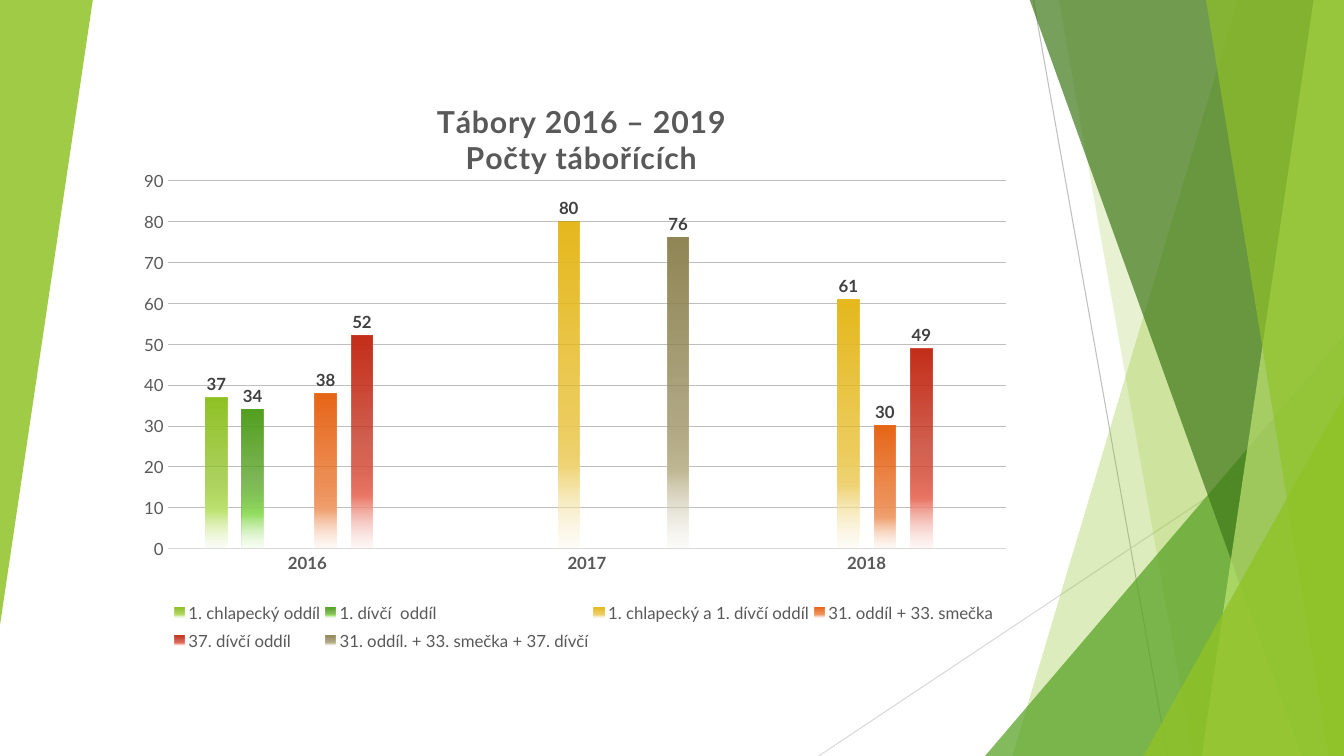
from lxml import etree
from pptx import Presentation
from pptx.chart.data import CategoryChartData
from pptx.dml.color import RGBColor
from pptx.enum.chart import XL_CHART_TYPE as ChartType
from pptx.enum.chart import XL_LABEL_POSITION as LabelPosition
from pptx.enum.chart import XL_LEGEND_POSITION as LegendPosition
from pptx.enum.chart import XL_TICK_MARK as TickMark
from pptx.enum.shapes import MSO_CONNECTOR as Connector
from pptx.enum.shapes import MSO_SHAPE as Shape
from pptx.oxml.ns import qn
from pptx.util import Inches, Pt

WIDTH, HEIGHT = 13.33, 7.5
COLORS = {
    "lime": "90C226", "green": "54A021", "forest": "3F7819", "pale": "C0E474",
    "text": "595959", "label": "404040", "grid": "BFBFBF", "axis": "D9D9D9",
}
YEARS = ["2016", "2017", "2018"]
# Name, camper counts, then the strong, light and faint gradient colours
TROOPS = [
    ("1. chlapecký oddíl", (37, 0, 0), ("90C226", "C0E474", "EAF6D1")),
    ("1. dívčí  oddíl", (34, 0, 0), ("54A021", "94DE61", "DBF4CA")),
    ("1. chlapecký a 1. dívčí oddíl", (0, 80, 61), ("E6B91E", "F0D578", "FAF1D2")),
    ("31. oddíl + 33. smečka ", (38, 0, 30), ("E76618", "F1A374", "FAE0D1")),
    ("37. dívčí oddíl", (52, 0, 49), ("C42F1A", "EB7766", "F8D2CC")),
    ("31. oddíl. + 33. smečka + 37. dívčí", (0, 76, 0), ("918655", "C1B995", "EAE8DC")),
]


def rgb(name):
    return RGBColor.from_string(COLORS[name])


def set_alpha(color, percent):
    etree.SubElement(color, qn("a:alpha"), val=str(percent * 1000))


class SlideBuilder:
    def __init__(self, slide, font="Lato"):
        self.shapes = slide.shapes
        self.font = font

    def style_font(self, font, size, color="text", bold=False):
        font.name, font.size, font.bold = self.font, Pt(size), bold
        font.color.rgb = rgb(color)

    def line(self, start, end, color):
        points = [Inches(value) for value in (*start, *end)]
        line = self.shapes.add_connector(Connector.STRAIGHT, *points)
        line.line.color.rgb = rgb(color)
        line.line.width = Pt(0.75)
        etree.SubElement(line._element.spPr, qn("a:effectLst"))

    def paint(self, shape, color, opacity):
        shape.shadow.inherit = False
        shape.fill.solid()
        shape.fill.fore_color.rgb = rgb(color)
        shape.line.fill.background()
        set_alpha(next(shape._element.spPr.iter(qn("a:srgbClr"))), opacity)

    def band(self, top_left, bottom_left, color, opacity):
        """Slanted band that reaches the right edge of the slide."""
        corners = [(WIDTH, -0.01), (WIDTH, HEIGHT), (bottom_left, HEIGHT)]
        outline = self.shapes.build_freeform(Inches(top_left), Inches(-0.01))
        outline.add_line_segments([(Inches(x), Inches(y)) for x, y in corners])
        self.paint(outline.convert_to_shape(), color, opacity)

    def triangle(self, left, top, width, height, color, opacity, rotation=0):
        size = [Inches(value) for value in (left, top, width, height)]
        shape = self.shapes.add_shape(Shape.ISOSCELES_TRIANGLE, *size)
        shape.adjustments[0] = 1
        shape.rotation = rotation
        self.paint(shape, color, opacity)

    def place(self, part, inner=False, **fractions):
        """Give a chart part a fixed place, in fractions of the chart."""
        for old in part.findall(qn("c:layout")):
            part.remove(old)
        layout = etree.Element(qn("c:layout"))
        manual = etree.SubElement(layout, qn("c:manualLayout"))
        if inner:
            etree.SubElement(manual, qn("c:layoutTarget"), val="inner")
        for side in ("x", "y"):
            etree.SubElement(manual, qn(f"c:{side}Mode"), val="edge")
        for key, value in fractions.items():
            etree.SubElement(manual, qn(f"c:{key}"), val=str(value))
        overlay = part.find(qn("c:overlay"))
        if overlay is None:
            part.insert(0, layout)
        else:
            overlay.addprevious(layout)

    def fade(self, series, colors):
        """Fill columns from a strong colour down to a nearly clear one."""
        strong, light, faint = colors
        series.format.fill.gradient()
        series.format.fill.gradient_angle = 270
        stops = next(series._element.iter(qn("a:gsLst")))
        for old in list(stops):
            stops.remove(old)
        for place, color, opacity in ((0, strong, 100), (51, strong, 75),
                                      (75, light, 100), (100, faint, 15)):
            stop = etree.SubElement(stops, qn("a:gs"), pos=str(place * 1000))
            set_alpha(etree.SubElement(stop, qn("a:srgbClr"), val=color), opacity)

    def chart_title(self, chart, lines, size):
        frame = chart.chart_title.text_frame
        for index, text in enumerate(lines):
            para = frame.add_paragraph() if index else frame.paragraphs[0]
            span = para.add_run()
            span.text = text
            self.style_font(span.font, size, bold=True)
            span.font._element.set("spc", "50")
        self.place(chart.chart_title._element, x=0.34, y=0.03)

    def column_chart(self, left, top, width, height):
        data = CategoryChartData()
        data.categories = YEARS
        for name, counts, _ in TROOPS:
            data.add_series(name, counts)
        size = [Inches(value) for value in (left, top, width, height)]
        chart = self.shapes.add_chart(ChartType.COLUMN_CLUSTERED, *size, data).chart
        self.style_font(chart.font, 12)
        self.chart_title(chart, ["Tábory 2016 – 2019", "Počty tábořících"], 21.6)

        # Columns and their labels; the number format hides zeros
        plot = chart.plots[0]
        plot.gap_width, plot.overlap = 355, -70
        plot.vary_by_categories = False
        for series, (_, _, colors) in zip(plot.series, TROOPS):
            self.fade(series, colors)
        plot.has_data_labels = True
        labels = plot.data_labels
        labels.show_value = True
        labels.number_format, labels.number_format_is_linked = "#", False
        labels.position = LabelPosition.OUTSIDE_END
        self.style_font(labels.font, 12, "label", bold=True)

        # Axes
        years, counts = chart.category_axis, chart.value_axis
        for axis in (years, counts):
            axis.major_tick_mark = axis.minor_tick_mark = TickMark.NONE
            self.style_font(axis.tick_labels.font, 12, bold=axis is years)
        years.format.line.color.rgb = rgb("axis")
        years.format.line.width = Pt(0.75)
        counts.format.line.fill.background()
        counts.minimum_scale, counts.maximum_scale, counts.major_unit = 0, 90, 10
        counts.major_gridlines.format.line.color.rgb = rgb("grid")
        counts.major_gridlines.format.line.width = Pt(0.75)
        self.place(plot._element.getparent(), inner=True, x=0.043, y=0.169, w=0.936, h=0.616)

        # Legend
        chart.has_legend = True
        chart.legend.position = LegendPosition.BOTTOM
        chart.legend.include_in_layout = False
        self.style_font(chart.legend.font, 12)
        self.place(chart.legend._element, x=0.045, y=0.86, w=0.93, h=0.11)


def main():
    deck = Presentation()
    deck.slide_width, deck.slide_height = Inches(WIDTH), Inches(HEIGHT)
    page = SlideBuilder(deck.slides.add_slide(deck.slide_layouts[6]))

    # Decoration on the right and left edges
    page.line((10.25, 0), (11.58, HEIGHT), "grid")
    page.line((WIDTH, 4.03), (8.12, HEIGHT), "axis")
    page.band(12.28, 10.04, "lime", 30)
    page.band(10.5, 11.83, "lime", 20)
    page.triangle(9.77, 3.33, 3.56, 4.17, "green", 72)
    page.band(10.21, 12.91, "forest", 70)
    page.band(13.03, 11.92, "pale", 70)
    page.band(11.96, 13.18, "lime", 65)
    page.triangle(11.34, 3.93, 1.99, 3.57, "lime", 80)
    page.triangle(0, 0, 0.92, 6.2, "lime", 85, rotation=180)

    # Camper counts by year
    page.column_chart(1.28, 0.79, 8.89, 5.93)
    deck.save("out.pptx")


if __name__ == "__main__":
    main()
